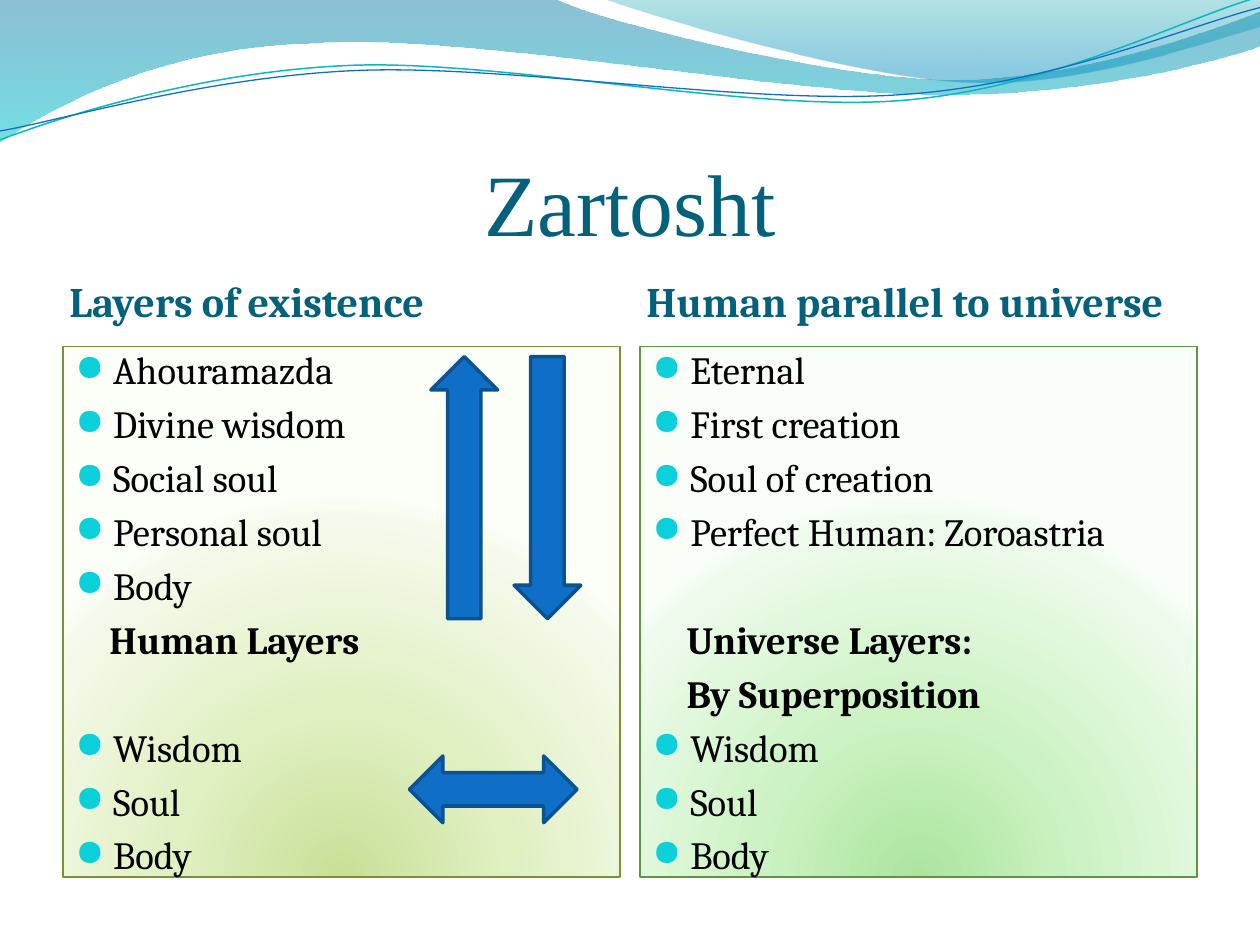
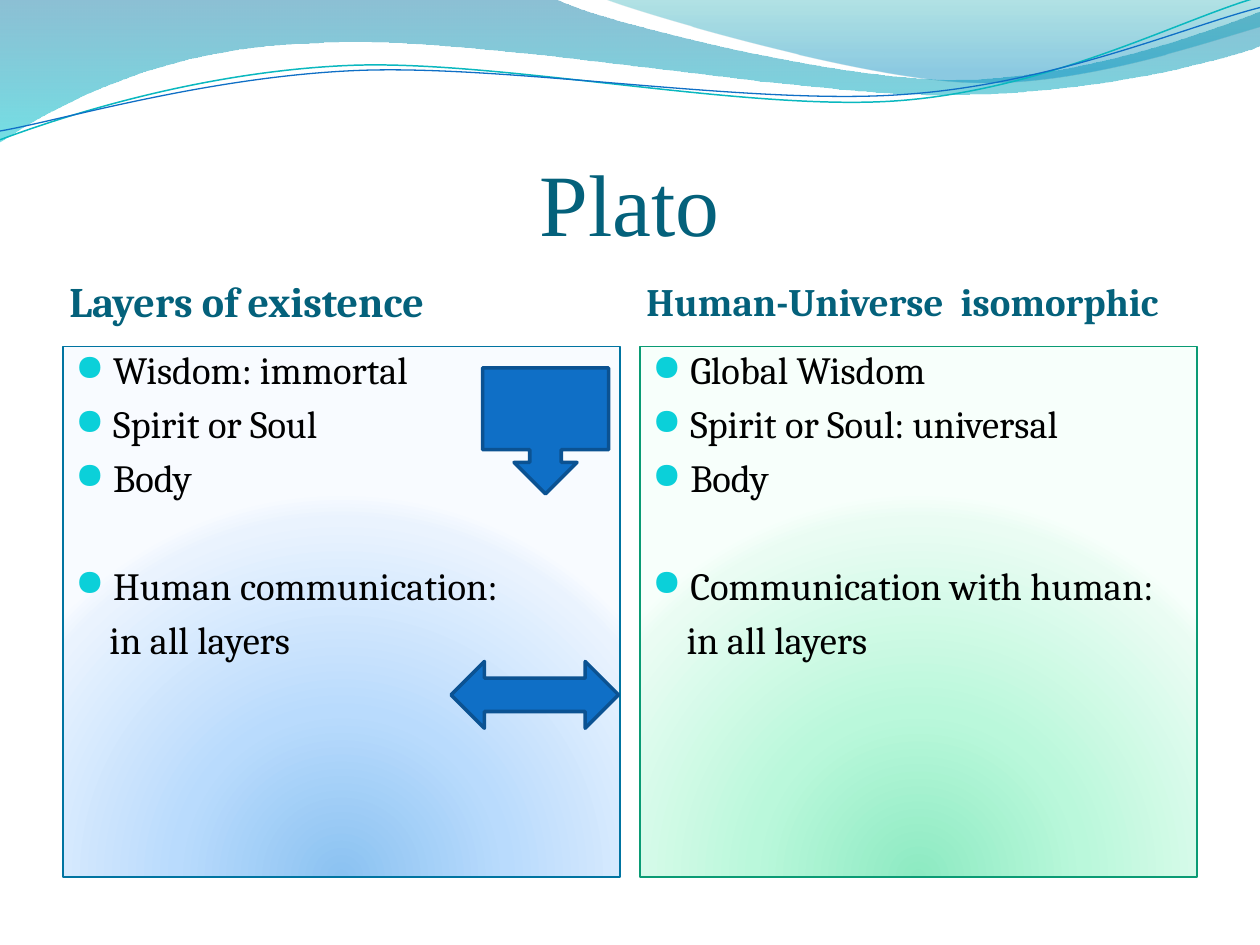
from collections import namedtuple

from lxml import etree
from pptx import Presentation
from pptx.dml.color import RGBColor
from pptx.enum.shapes import MSO_SHAPE
from pptx.enum.text import MSO_ANCHOR, PP_ALIGN
from pptx.oxml import parse_xml
from pptx.oxml.ns import nsdecls, qn
from pptx.util import Inches, Pt

RECTANGLE = MSO_SHAPE.RECTANGLE
UP_ARROW = MSO_SHAPE.UP_ARROW
DOWN_ARROW = MSO_SHAPE.DOWN_ARROW
TWO_WAY_ARROW = MSO_SHAPE.LEFT_RIGHT_ARROW
DOWN_CALLOUT = MSO_SHAPE.DOWN_ARROW_CALLOUT
TOP, MIDDLE, BOTTOM = MSO_ANCHOR.TOP, MSO_ANCHOR.MIDDLE, MSO_ANCHOR.BOTTOM
LEFT, CENTER = PP_ALIGN.LEFT, PP_ALIGN.CENTER

COLORS = {
    "heading": "04617B",
    "text": "000000",
    "bullet": "0BD0D9",
    "arrow": "0F6FC6",
    "arrow_edge": "0B5292",
    "teal_line": "0AB8BF",
    "blue_line": "0F6FC6",
}
TITLE_FONT, BODY_FONT, BULLET_FONT = "Times New Roman", "Cambria", "OpenSymbol"
COLUMN_LEFTS = (0.5, 5.08)
COLUMN_WIDTH = 4.42
ITEM_SPACE, GAP_SPACE = 4.4, 35.2

# Panel themes: edge colour and the gradient from the bottom centre outwards
PANEL_STOPS = (0, 43, 93, 100)
PANELS = {
    "olive": ("7B9135", ("C9DF97", "E0F0C1", "F5FAEC", "FCFEF8")),
    "green": ("5B9747", ("ACE49F", "CDF3C4", "EFFBED", "F9FFF8")),
    "blue": ("0074A1", ("8BC2F1", "B9DBFD", "EAF3FE", "F8FBFF")),
    "mint": ("0A9B74", ("8DEAC2", "BAF8DB", "EAFCF3", "F7FFFB")),
}
RADIAL = '<a:path path="circle"><a:fillToRect l="50000" t="130000" r="50000" b="-30000"/></a:path>'
DOWNWARD = '<a:lin ang="5400000" scaled="0"/>'

# Outlines in inches: two numbers are a straight line, six a Bezier curve
WIDE_WAVE = [(0, 0), (4.4, -0.01), (4.76, 0.17, 6.64, 0.63, 7.58, 0.63),
             (8.53, 0.63, 9.58, 0.26, 10, 0.09), (10.01, 0.36),
             (9.83, 0.44, 8.7, 0.76, 7.46, 0.75),
             (6.22, 0.75, 3.82, 0.28, 2.57, 0.34),
             (1.29, 0.36, 0.46, 0.83, -0.01, 1.13)]
RIGHT_WAVE = [(4.79, -0.01), (5.09, 0.11, 6.82, 0.62, 7.69, 0.65),
              (8.56, 0.69, 9.61, 0.32, 10, 0.21), (10, 0)]
TEAL_CURVE = [(0, 1.11), (0.48, 0.93, 1.58, 0.57, 2.77, 0.52),
              (3.95, 0.47, 5.93, 0.89, 7.13, 0.8),
              (8.33, 0.71, 9.38, 0.15, 9.98, -0.02)]
BLUE_CURVE = [(0, 1.04), (0.47, 0.96, 1.64, 0.61, 2.83, 0.56),
              (4.03, 0.51, 5.97, 0.84, 7.17, 0.75),
              (8.36, 0.67, 9.41, 0.21, 10, 0.06)]

Item = namedtuple("Item", "text bullet bold gap", defaults=(True, False, False))
Column = namedtuple("Column", "heading size theme items")


def rgb(hex_color):
    return RGBColor.from_string(hex_color)


def fill_gradient(shape, stops, direction):
    """Fill with (position %, colour, opacity %) stops."""
    stops_xml = "".join(
        f'<a:gs pos="{position * 1000}"><a:srgbClr val="{color}">'
        f'<a:alpha val="{opacity * 1000}"/></a:srgbClr></a:gs>'
        for position, color, opacity in stops)
    shape.fill.gradient()
    properties = shape.element.spPr
    properties.replace(properties.find(qn("a:gradFill")), parse_xml(
        f'<a:gradFill {nsdecls("a")} rotWithShape="1">'
        f"<a:gsLst>{stops_xml}</a:gsLst>{direction}</a:gradFill>"))


def set_line(shape, color, width):
    shape.line.color.rgb = rgb(color)
    shape.line.width = Pt(width)


def add_outline(slide, outline, closed):
    """Build a freeform through all points, then bend the curved segments."""
    points = [(Inches(x), Inches(y)) for segment in outline
              for x, y in zip(segment[::2], segment[1::2])]
    builder = slide.shapes.build_freeform(*points[0], scale=1.0)
    builder.add_line_segments(points[1:], close=closed)
    shape = builder.convert_to_shape()
    shape.shadow.inherit = False
    straight_lines = iter(list(shape.element.iter(qn("a:lnTo"))))
    for segment in outline[1:]:
        line = next(straight_lines)
        if len(segment) == 6:
            line.tag = qn("a:cubicBezTo")
            for _ in range(2):
                control = next(straight_lines)
                control.getparent().remove(control)
                line.append(control[0])
    return shape


def add_wave_header(slide, layout):
    """Draw the waves and hand them to the layout that all slides share."""
    waves = []
    for outline, stops in (
            (WIDE_WAVE, [(0, "0074A1", 45), (100, "00C6CF", 55)]),
            (RIGHT_WAVE, [(0, "00A1A9", 30), (80, "008BBF", 45)])):
        wave = add_outline(slide, outline, closed=True)
        fill_gradient(wave, stops, DOWNWARD)
        wave.line.fill.background()
        waves.append(wave)
    for outline, color, width in ((TEAL_CURVE, "teal_line", 0.85),
                                  (BLUE_CURVE, "blue_line", 0.75)):
        curve = add_outline(slide, outline, closed=False)
        curve.fill.background()
        set_line(curve, COLORS[color], width)
        waves.append(curve)
    for wave in waves:
        layout.shapes.element.append(wave.element)


def set_up_frame(frame, anchor, margins):
    frame.word_wrap = True
    frame.vertical_anchor = anchor
    (frame.margin_left, frame.margin_top,
     frame.margin_right, frame.margin_bottom) = map(Inches, margins)


def write(paragraph, text, size, font=BODY_FONT, color="text", bold=False,
          align=LEFT, space_before=0):
    paragraph.alignment = align
    paragraph.space_before = Pt(space_before)
    run = paragraph.add_run()
    run.text = text
    run.font.size = Pt(size)
    run.font.name = font
    run.font.bold = bold
    run.font.color.rgb = rgb(COLORS[color])


def set_indent(paragraph, bullet):
    properties = paragraph._p.get_or_add_pPr()
    if not bullet:
        properties.set("marL", str(Inches(0.27)))
        properties.set("indent", "0")
        etree.SubElement(properties, qn("a:buNone"))
        return
    properties.set("marL", str(Inches(0.3)))
    properties.set("indent", str(Inches(-0.3)))
    color = etree.SubElement(properties, qn("a:buClr"))
    etree.SubElement(color, qn("a:srgbClr"), val=COLORS["bullet"])
    etree.SubElement(properties, qn("a:buSzPct"), val="95000")
    etree.SubElement(properties, qn("a:buFont"), typeface=BULLET_FONT)
    etree.SubElement(properties, qn("a:buChar"), char="●")


def set_title(slide, text):
    title = slide.shapes.title
    title.left, title.top, title.width, title.height = map(Inches, (0.5, 0.77, 9, 1.25))
    set_up_frame(title.text_frame, BOTTOM, (0, 0.05, 0, 0))
    write(title.text_frame.paragraphs[0], text, 50, font=TITLE_FONT,
          color="heading", align=CENTER)


def add_heading(slide, left, text, size):
    box = slide.shapes.add_textbox(*map(Inches, (left, 2.03, COLUMN_WIDTH, 0.72)))
    set_up_frame(box.text_frame, MIDDLE, (0.05, 0, 0.05, 0))
    write(box.text_frame.paragraphs[0], text, size, color="heading", bold=True)


def add_panel(slide, left, theme, items):
    edge, gradient = PANELS[theme]
    panel = slide.shapes.add_shape(
        RECTANGLE, *map(Inches, (left, 2.75, COLUMN_WIDTH, 4.21)))
    panel.shadow.inherit = False
    fill_gradient(panel, [(position, color, 100) for position, color
                          in zip(PANEL_STOPS, gradient)], RADIAL)
    set_line(panel, edge, 0.75)
    frame = panel.text_frame
    set_up_frame(frame, TOP, (0.1, 0, 0.1, 0.05))
    for index, item in enumerate(items):
        paragraph = frame.add_paragraph() if index else frame.paragraphs[0]
        write(paragraph, item.text, 22, bold=item.bold,
              space_before=GAP_SPACE if item.gap else ITEM_SPACE)
        set_indent(paragraph, item.bullet)


def add_arrow(slide, kind, left, top, width, height):
    arrow = slide.shapes.add_shape(kind, *map(Inches, (left, top, width, height)))
    arrow.shadow.inherit = False
    arrow.fill.solid()
    arrow.fill.fore_color.rgb = rgb(COLORS["arrow"])
    set_line(arrow, COLORS["arrow_edge"], 2)


def fill_slide(slide, title, columns, arrows):
    set_title(slide, title)
    for left, column in zip(COLUMN_LEFTS, columns):
        add_heading(slide, left, column.heading, column.size)
    for left, column in zip(COLUMN_LEFTS, columns):
        add_panel(slide, left, column.theme, column.items)
    for arrow in arrows:
        add_arrow(slide, *arrow)


def main():
    presentation = Presentation()
    presentation.slide_width, presentation.slide_height = Inches(10), Inches(7.5)
    layout = presentation.slide_layouts[5]

    zartosht = presentation.slides.add_slide(layout)
    add_wave_header(zartosht, layout)
    fill_slide(zartosht, "Zartosht", [
        Column("Layers of existence", 24, "olive", [
            Item("Ahouramazda"), Item("Divine wisdom"), Item("Social soul"),
            Item("Personal soul"), Item("Body"),
            Item("Human Layers", bullet=False, bold=True),
            Item("Wisdom", gap=True), Item("Soul"), Item("Body")]),
        Column("Human parallel to universe", 24, "green", [
            Item("Eternal"), Item("First creation"), Item("Soul of creation"),
            Item("Perfect Human: Zoroastria"),
            Item("Universe Layers:", bullet=False, bold=True, gap=True),
            Item("By Superposition", bullet=False, bold=True),
            Item("Wisdom"), Item("Soul"), Item("Body")]),
    ], [(UP_ARROW, 3.42, 2.83, 0.53, 2.08),
        (DOWN_ARROW, 4.08, 2.83, 0.53, 2.08),
        (TWO_WAY_ARROW, 3.25, 6, 1.33, 0.53)])

    plato = presentation.slides.add_slide(layout)
    fill_slide(plato, "Plato", [
        Column("Layers of existence", 24, "blue", [
            Item("Wisdom: immortal"), Item("Spirit or Soul"), Item("Body"),
            Item("Human communication:", gap=True),
            Item("in all layers", bullet=False)]),
        Column("Human-Universe  isomorphic", 22.2, "mint", [
            Item("Global Wisdom"), Item("Spirit or Soul: universal"), Item("Body"),
            Item("Communication with human:", gap=True),
            Item("in all layers", bullet=False)]),
    ], [(TWO_WAY_ARROW, 3.58, 5.25, 1.33, 0.53),
        (DOWN_CALLOUT, 3.83, 2.92, 1, 1)])

    presentation.save("out.pptx")


if __name__ == "__main__":
    main()
